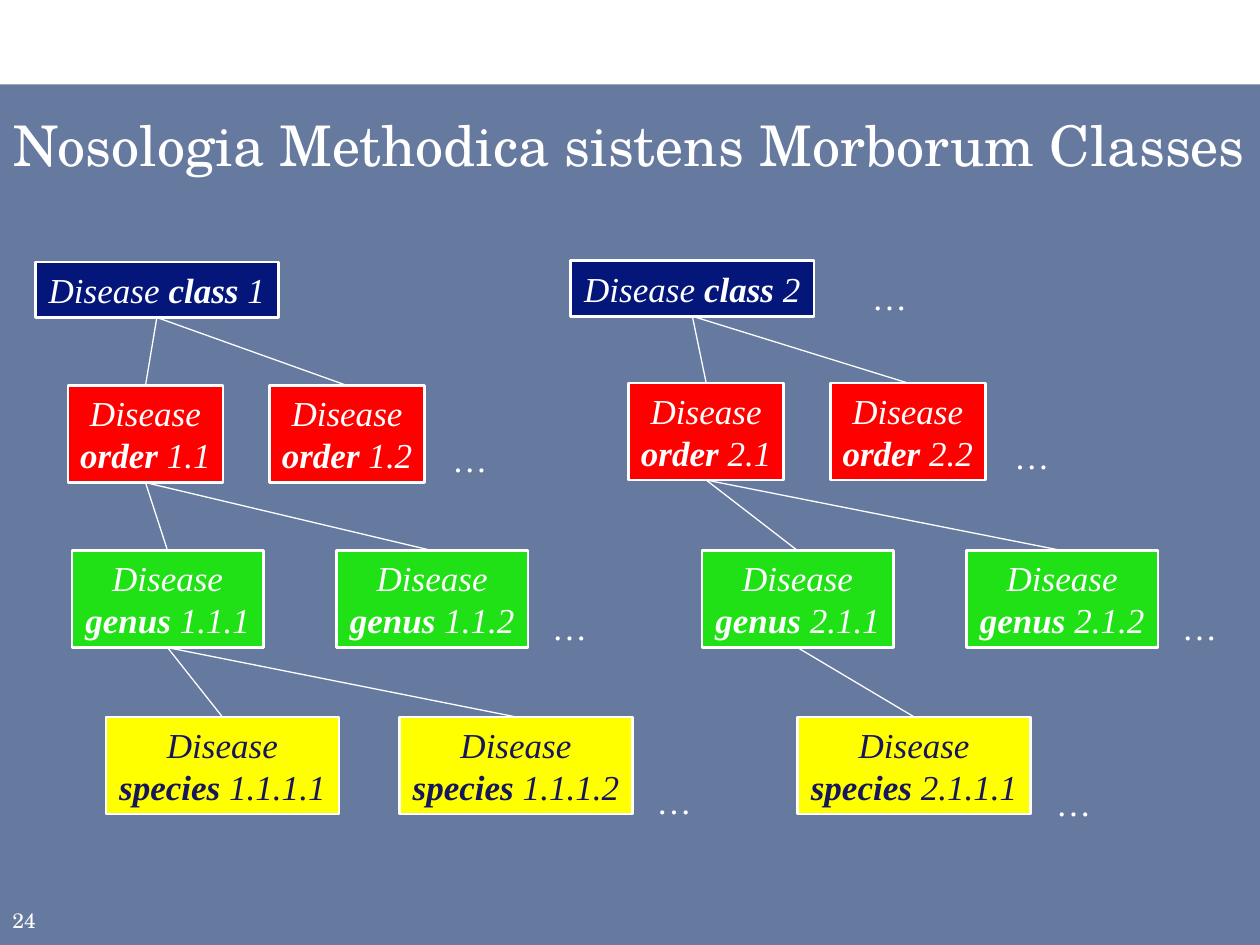
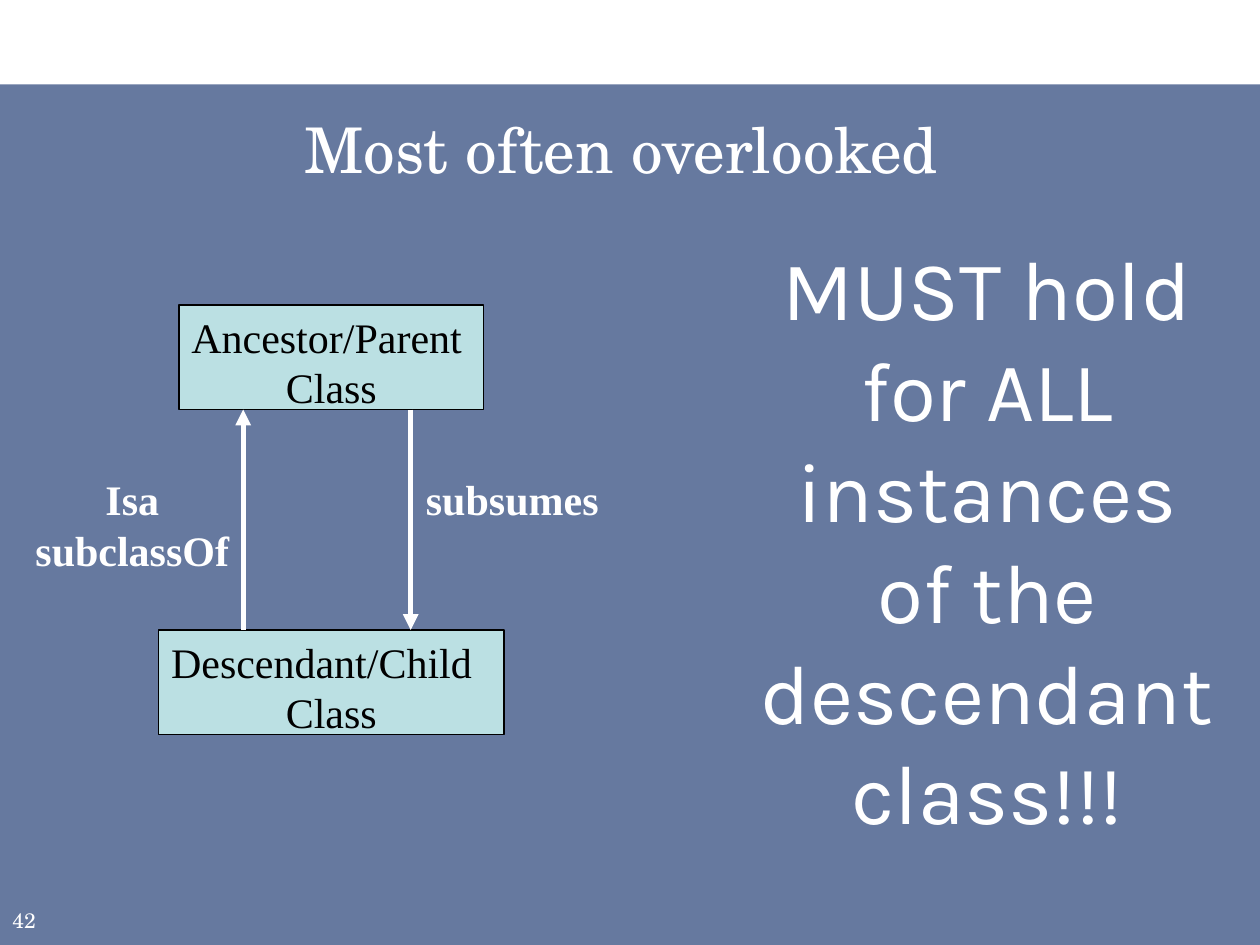
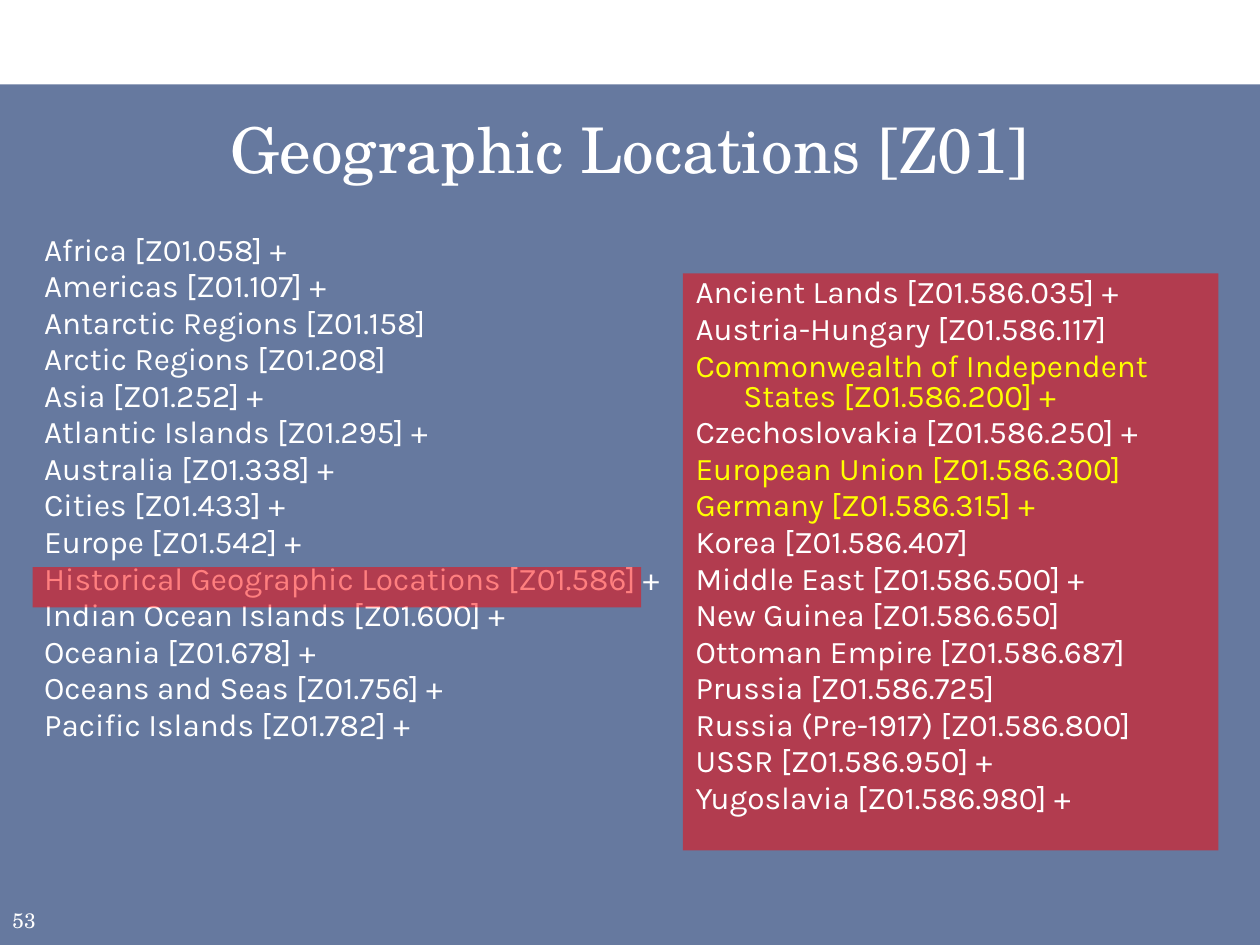
from lxml import etree
from pptx import Presentation
from pptx.dml import color
from pptx.enum import shapes, text
from pptx.oxml import ns
from pptx.util import Inches, Pt

WHITE, YELLOW, RED, BLACK = "FFFFFF", "FFFF00", "FF0000", "000000"
BAND, PALE = "002060", "BBE0E3"
SERIF, TITLE_FONT, BODY_FONT = "Times New Roman", "TeX Gyre Schola", "Karla"
CENTER, LEFT = text.PP_ALIGN.CENTER, text.PP_ALIGN.LEFT

# rank name, width, height, fill, font colour
RANKS = [
    ("class", 1.93, 0.44, "04167A", WHITE),
    ("order", 1.23, 0.77, RED, WHITE),
    ("genus", 1.52, 0.77, "1FE115", WHITE),
    ("species", 1.85, 0.77, YELLOW, "16165D"),
]
# numbers, left, top, step between siblings, left and top of the ellipsis
SIBLINGS = [
    (["1"], 0.28, 2.08, 0, None),
    (["2"], 4.53, 2.07, 0, (6.84, 2.14)),
    (["1.1", "1.2"], 0.54, 3.06, 1.6, (3.51, 3.42)),
    (["2.1", "2.2"], 4.99, 3.04, 1.6, (7.97, 3.4)),
    (["1.1.1", "1.1.2"], 0.57, 4.37, 2.1, (4.3, 4.76)),
    (["2.1.1", "2.1.2"], 5.57, 4.37, 2.1, (9.3, 4.76)),
    (["1.1.1.1", "1.1.1.2"], 0.84, 5.69, 2.33, (5.13, 6.14)),
    (["2.1.1.1"], 6.33, 5.69, 0, (8.3, 6.15)),
]
CLASS_BOXES = [
    ("Ancestor/Parent", 1.42, 2.42, 2.42),
    ("Descendant/Child", 1.26, 5, 2.74),
]
ARROWS = [(1.93, 5, 3.25), (3.26, 3.25, 5)]
RELATIONS = [
    (["Isa", "subclassOf"], (0.17, 3.71, 1.76, 0.91)),
    (["subsumes"], (3.04, 3.71, 2.05, 0.5)),
]
REQUIREMENT = "MUST hold for ALL instances of the descendant class!!!"
LOCATIONS = [
    "Africa [Z01.058] +",
    "Americas [Z01.107] +",
    "Antarctic Regions [Z01.158]",
    "Arctic Regions [Z01.208]",
    "Asia [Z01.252] +",
    "Atlantic Islands [Z01.295] +",
    "Australia [Z01.338] +",
    "Cities [Z01.433] +",
    "Europe [Z01.542] +",
    "Historical Geographic Locations [Z01.586] +",
    "Indian Ocean Islands [Z01.600] +",
    "Oceania [Z01.678] +",
    "Oceans and Seas [Z01.756] +",
    "Pacific Islands [Z01.782] +",
]
HISTORICAL = [
    "Ancient Lands [Z01.586.035] +",
    "Austria-Hungary [Z01.586.117]",
    "Commonwealth of Independent States [Z01.586.200] +",
    "Czechoslovakia [Z01.586.250] +",
    "European Union [Z01.586.300]",
    "Germany [Z01.586.315] +",
    "Korea [Z01.586.407]",
    "Middle East [Z01.586.500] +",
    "New Guinea [Z01.586.650]",
    "Ottoman Empire [Z01.586.687]",
    "Prussia [Z01.586.725]",
    "Russia (Pre-1917) [Z01.586.800]",
    "USSR [Z01.586.950] +",
    "Yugoslavia [Z01.586.980] +",
]
EMPHASIZED = ("Commonwealth", "European Union", "Germany")


def rgb(value):
    return color.RGBColor.from_string(value)


def inches(values):
    return [Inches(value) for value in values]


def place(shape, box):
    shape.left, shape.top, shape.width, shape.height = inches(box)


def paint(shape, fill, alpha=None):
    shape.fill.solid()
    shape.fill.fore_color.rgb = rgb(fill)
    if alpha:
        tint = shape.fill._xPr.find(".//" + ns.qn("a:srgbClr"))
        etree.SubElement(tint, ns.qn("a:alpha"), val=str(alpha * 1000))


def style(paragraph, name, size, ink, align=CENTER, bold=None, italic=None):
    paragraph.alignment = align
    font = paragraph.font
    font.name, font.size, font.bold, font.italic = name, Pt(size), bold, italic
    font.color.rgb = rgb(ink)


def write(shape, lines, *look, wrap=True, **options):
    frame = shape.text_frame
    frame.word_wrap = wrap
    frame.text = "\n".join(lines)
    for paragraph in frame.paragraphs:
        style(paragraph, *look, **options)
    return frame


def add_box(slide, box, fill, alpha=None, line=None, line_width=0.75):
    shape = slide.shapes.add_shape(shapes.MSO_SHAPE.RECTANGLE, *inches(box))
    shape.shadow.inherit = False
    paint(shape, fill, alpha)
    if line:
        shape.line.color.rgb = rgb(line)
        shape.line.width = Pt(line_width)
    else:
        shape.line.fill.background()
    shape.text_frame.vertical_anchor = text.MSO_ANCHOR.TOP
    return shape


def add_label(slide, box, lines, *look, **options):
    return write(slide.shapes.add_textbox(*inches(box)), lines, *look, **options)


def add_line(slide, ends, width):
    line = slide.shapes.add_connector(shapes.MSO_CONNECTOR.STRAIGHT, *inches(ends))
    line.line.color.rgb = rgb(WHITE)
    line.line.width = Pt(width)
    etree.SubElement(line._element.spPr, ns.qn("a:effectLst"))
    return line


def add_slide(presentation, layout, title, number, size=36, left=0.25):
    slide = presentation.slides.add_slide(presentation.slide_layouts[layout])
    heading = slide.shapes.title
    place(heading, (left, 0.83, 10 - 2 * left, 0.83))
    frame = write(heading, [title], TITLE_FONT, size, WHITE)
    frame.vertical_anchor = text.MSO_ANCHOR.TOP
    frame.auto_size = text.MSO_AUTO_SIZE.NONE
    page = add_label(slide, (0, 7.1, 0.58, 0.4), [number], TITLE_FONT, 12, WHITE, LEFT)
    page.vertical_anchor = text.MSO_ANCHOR.MIDDLE
    return slide


def fill_body(body, box, lines, size, align=LEFT, hanging=0, spacing=None):
    place(body, box)
    frame = body.text_frame
    frame.text = "\n".join(lines)
    frame.auto_size = text.MSO_AUTO_SIZE.NONE
    for paragraph in frame.paragraphs:
        properties = paragraph._p.get_or_add_pPr()
        properties.set("marL", str(Inches(hanging)))
        properties.set("indent", str(-Inches(hanging)))
        etree.SubElement(properties, ns.qn("a:buNone"))
        ink = YELLOW if paragraph.text.startswith(EMPHASIZED) else WHITE
        style(paragraph, BODY_FONT, size, ink, align)
        paragraph.line_spacing = spacing
    frame.paragraphs[0].space_before = Pt(0)


def add_node(slide, number, left, top):
    rank, width, height, fill, ink = RANKS[number.count(".")]
    node = add_box(slide, (left, top, width, height), fill, line=WHITE, line_width=1.5)
    lines = ["Disease "] if rank == "class" else ["Disease", ""]
    frame = write(node, lines, SERIF, 20, ink, wrap=False, italic=True)
    last = frame.paragraphs[-1]
    name = last.add_run()
    name.text, name.font.bold = rank, True
    last.add_run().text = " " + number
    return node


def build_tree(presentation):
    slide = add_slide(presentation, 5, "Nosologia Methodica sistens Morborum Classes ",
                      "24", size=32, left=0)
    nodes = {}
    for numbers, left, top, step, ellipsis in SIBLINGS:
        for index, number in enumerate(numbers):
            nodes[number] = add_node(slide, number, left + index * step, top)
            parent = nodes.get(number.rpartition(".")[0])
            if parent:
                branch = add_line(slide, (0, 0, 1, 1), 0.75)
                branch.begin_connect(parent, 2)
                branch.end_connect(nodes[number], 0)
        if ellipsis:
            add_label(slide, (*ellipsis, 0.45, 0.44), ["…"], SERIF, 20, WHITE,
                      wrap=False, italic=True)


def build_subsumption(presentation):
    slide = add_slide(presentation, 1, "Most often overlooked ", "42")
    fill_body(slide.placeholders[1], (5.92, 1.83, 3.83, 5.42), [REQUIREMENT], 48, CENTER)
    for name, left, top, width in CLASS_BOXES:
        box = add_box(slide, (left, top, width, 0.83), PALE, line=BLACK)
        frame = write(box, [name, "Class"], SERIF, 24, BLACK)
        frame.paragraphs[0].alignment = LEFT
    for x, start, end in ARROWS:
        arrow = add_line(slide, (x, start, x, end), 3)
        etree.SubElement(arrow.line._get_or_add_ln(), ns.qn("a:tailEnd"), type="triangle")
    for lines, box in RELATIONS:
        add_label(slide, box, lines, SERIF, 24, WHITE, bold=True)


def build_locations(presentation):
    slide = add_slide(presentation, 3, "Geographic Locations [Z01]", "53")
    everywhere, historical = slide.placeholders[1], slide.placeholders[2]
    fill_body(everywhere, (0.25, 1.83, 9.5, 5.42), LOCATIONS, 18, hanging=0.38, spacing=0.8)
    fill_body(historical, (5.42, 2.17, 4.25, 4.58), HISTORICAL, 18, hanging=0.38, spacing=0.8)
    paint(historical, RED, 50)
    add_box(slide, (0.26, 4.5, 4.83, 0.32), RED, 50)


def main():
    presentation = Presentation()
    presentation.slide_width, presentation.slide_height = Inches(10), Inches(7.5)
    build_tree(presentation)
    build_subsumption(presentation)
    build_locations(presentation)
    band = add_box(presentation.slides[0], (0, 0.67, 10, 6.83), BAND, 60)
    presentation.slide_master.shapes[0]._element.addprevious(band._element)
    presentation.save("out.pptx")


if __name__ == "__main__":
    main()
